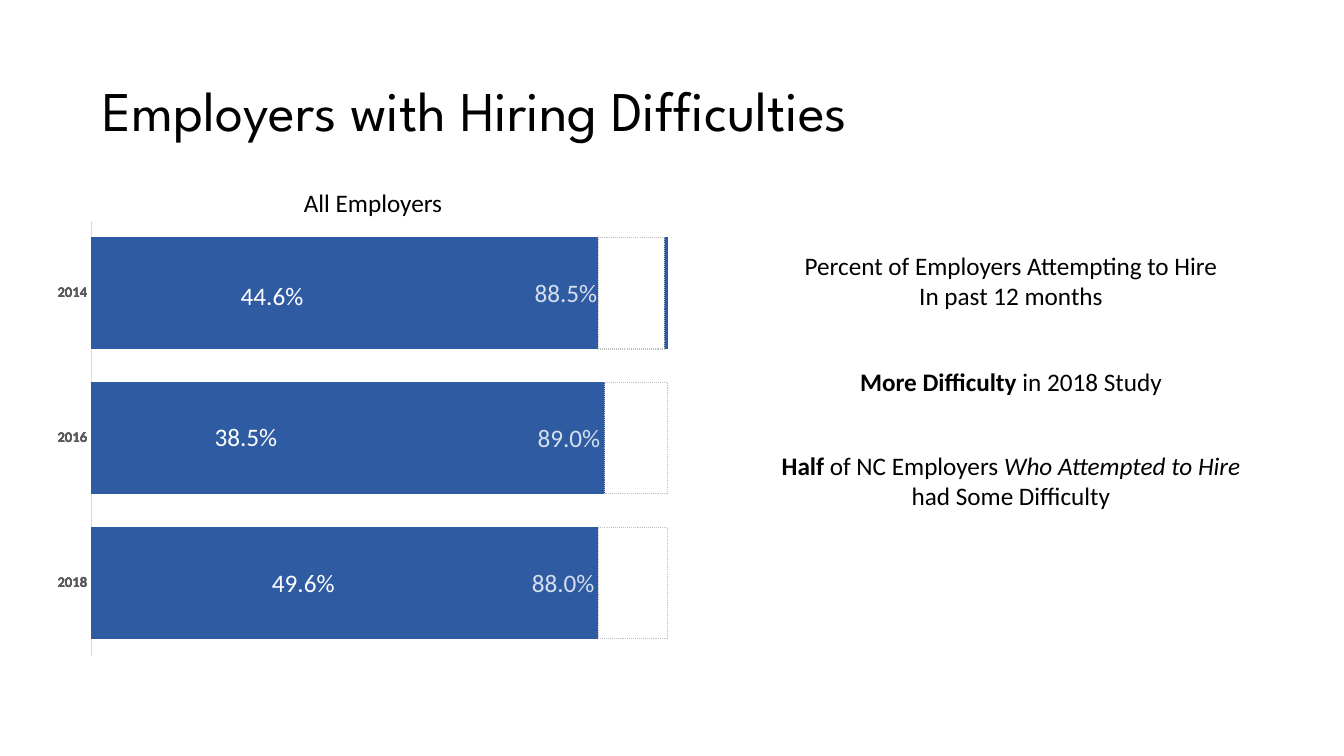
import pptx
import pptx.chart.data
import pptx.dml.color
import pptx.enum.chart
import pptx.enum.dml
import pptx.enum.text
import pptx.oxml
import pptx.oxml.ns
import pptx.util

Pt = pptx.util.Pt
RGB = pptx.dml.color.RGBColor
qn = pptx.oxml.ns.qn
ALIGN = pptx.enum.text.PP_ALIGN
KIND = pptx.enum.chart

BLACK = RGB(0x00, 0x00, 0x00)
WHITE = RGB(0xFF, 0xFF, 0xFF)
BLUE = RGB(0x2F, 0x5B, 0xA3)
GRAY = RGB(0x59, 0x59, 0x59)
RULE = RGB(0xD9, 0xD9, 0xD9)
DOTS = RGB(0xBF, 0xBF, 0xBF)

YEARS = ("2018", "2016", "2014")
PLOT = {"x": 0.136, "y": 0.005, "w": 0.858, "h": 0.995}


def make(tag, body=""):
    """Make a chart element that may hold drawing parts."""
    return pptx.oxml.parse_xml(
        f'<{tag} {pptx.oxml.ns.nsdecls("c", "a")}>{body}</{tag}>')


class Page:
    """The current slide and its style."""

    def __init__(self, deck, face="Calibri", size=18):
        self.slide = deck.slides.add_slide(deck.slide_layouts[6])
        self.face, self.size = face, size

    def text(self, box, lines, color=BLACK, align=ALIGN.CENTER, face=None,
             size=None):
        """Lines are paragraphs of (words, style) runs; "\\n" breaks a line."""
        shape = self.slide.shapes.add_textbox(*map(Pt, box))
        frame = shape.text_frame
        frame.word_wrap = True
        for i, runs in enumerate(lines):
            para = frame.add_paragraph() if i else frame.paragraphs[0]
            para.alignment = align
            for words, style in runs:
                if words == "\n":
                    para.add_line_break()
                    continue
                run = para.add_run()
                run.text = words
                font = run.font
                font.name = face or self.face
                font.size = Pt(size or self.size)
                font.color.rgb = color
                font.bold = style == "bold"
                font.italic = style == "italic"
        return frame

    def bars(self, box, rows, top, form):
        """A stacked bar chart; returns its series."""
        data = pptx.chart.data.CategoryChartData(number_format=form)
        data.categories = YEARS
        for i, row in enumerate(rows, 1):
            data.add_series(f"Series {i}", row)
        chart = self.slide.shapes.add_chart(
            KIND.XL_CHART_TYPE.BAR_STACKED, *map(Pt, box), data).chart
        chart.has_title = chart.has_legend = False
        chart.font.name, chart.font.size = self.face, Pt(10)
        chart.font.color.rgb = BLACK

        # Axes
        years, scale = chart.category_axis, chart.value_axis
        years.major_tick_mark = KIND.XL_TICK_MARK.NONE
        years.format.line.color.rgb = RULE
        years.format.line.width = Pt(0.75)
        font = years.tick_labels.font
        font.name, font.size, font.bold = self.face, Pt(10.5), True
        font.color.rgb = GRAY
        scale.minimum_scale, scale.maximum_scale = 0, top
        scale.has_major_gridlines = scale.visible = False

        # Bars
        plot = chart.plots[0]
        plot.vary_by_categories = False
        plot.gap_width, plot.overlap = 30, 100
        for item in plot.series:
            item.invert_if_negative = False
            self.fill(item, BLUE)

        # Clear background and fixed plot area
        root = chart.element
        area = root.find(".//" + qn("c:plotArea"))
        for old in area.findall(qn("c:layout")):
            area.remove(old)
        sides = "".join(f'<c:{k}Mode val="edge"/>' for k in "xy")
        sides += "".join(f'<c:{k} val="{v}"/>' for k, v in PLOT.items())
        area.insert(0, make("c:layout", '<c:manualLayout><c:layoutTarget '
                            f'val="inner"/>{sides}</c:manualLayout>'))
        clear = "<a:noFill/><a:ln><a:noFill/></a:ln>"
        area.append(make("c:spPr", clear))
        root.find(qn("c:chart")).addnext(make("c:spPr", clear))
        return plot.series

    def fill(self, item, color, alpha=None):
        paint = item.format.fill
        paint.solid()
        paint.fore_color.rgb = color
        if alpha:
            tone = item.format.fill.fore_color
            tone.rgb = color
            node = item.format.element if hasattr(
                item.format, "element") else None
            props = item._element.find(qn("c:spPr")) if node is None else node
            props.find(".//" + qn("a:srgbClr")).append(
                make("a:alpha"))
            props.find(".//" + qn("a:alpha")).set("val", str(alpha * 1000))

    def label(self, item):
        tags = item.data_labels
        tags.show_value = True
        tags.number_format, tags.number_format_is_linked = "0.0%", False
        tags.position = KIND.XL_LABEL_POSITION.INSIDE_END
        tags.font.name, tags.font.size = self.face, Pt(self.size)
        tags.font.color.rgb = WHITE


def main():
    deck = pptx.Presentation()
    deck.slide_width, deck.slide_height = Pt(960), Pt(540)
    page = Page(deck)

    # Title
    title = page.text((66, 28.8, 828, 104.4),
                      [[("Employers with Hiring Difficulties", "")]],
                      align=ALIGN.LEFT, face="League Spartan", size=40)
    title.vertical_anchor = pptx.enum.text.MSO_ANCHOR.MIDDLE
    title.paragraphs[0].line_spacing = 0.9

    # Full bars, then the share attempting to hire
    box = (0, 156.2, 479.8, 312.5)
    page.bars(box, [(100, 100, 100)], 100, "0%")
    hire, rest = page.bars(
        box, [(0.88, 0.89, 0.885), (0.12, 0.11, 0.11)], 1, "0.0%")
    page.label(hire)
    page.fill(rest, BLUE, 20)

    # Findings
    left, wide = 515.5, 413.3
    half = page.text((left, 318.2, wide, 51), [[
        ("Half", "bold"), (" of NC Employers ", ""),
        ("Who Attempted to Hire", "italic"), ("\n", ""),
        ("had Some Difficulty", "")]])
    inset = half.paragraphs[0]._p.get_or_add_pPr()
    inset.set("marL", "0")
    inset.set("indent", str(-Pt(45)))
    page.text((left, 175, wide, 51),
              [[("Percent of Employers Attempting to Hire", "")],
               [("In past 12 months", "")]])
    page.text((left, 257.8, wide, 29),
              [[("More Difficulty", "bold"), (" in 2018 Study", "")]])
    page.text((59.8, 130.3, wide, 29), [[("All Employers", "")]])

    # Overlay with the share having difficulty
    hard, some, none = page.bars(
        box, [(80, 63, 70), (81, 100, 91), (22, 20, 21)], 183, "0")
    page.fill(some, BLUE, 20)
    page.fill(none, WHITE)
    edge = none.format.line
    edge.color.rgb, edge.width = DOTS, Pt(0.75)
    edge.dash_style = pptx.enum.dml.MSO_LINE.ROUND_DOT

    # Shares having difficulty
    for x, y, share in ((187.2, 401.8, "49.6%"), (146.2, 297.4, "38.5%"),
                        (164.9, 196.6, "44.6%")):
        page.text((x, y, 67.7, 29), [[(share, "")]], WHITE, ALIGN.LEFT)

    deck.save("out.pptx")


if __name__ == "__main__":
    main()
